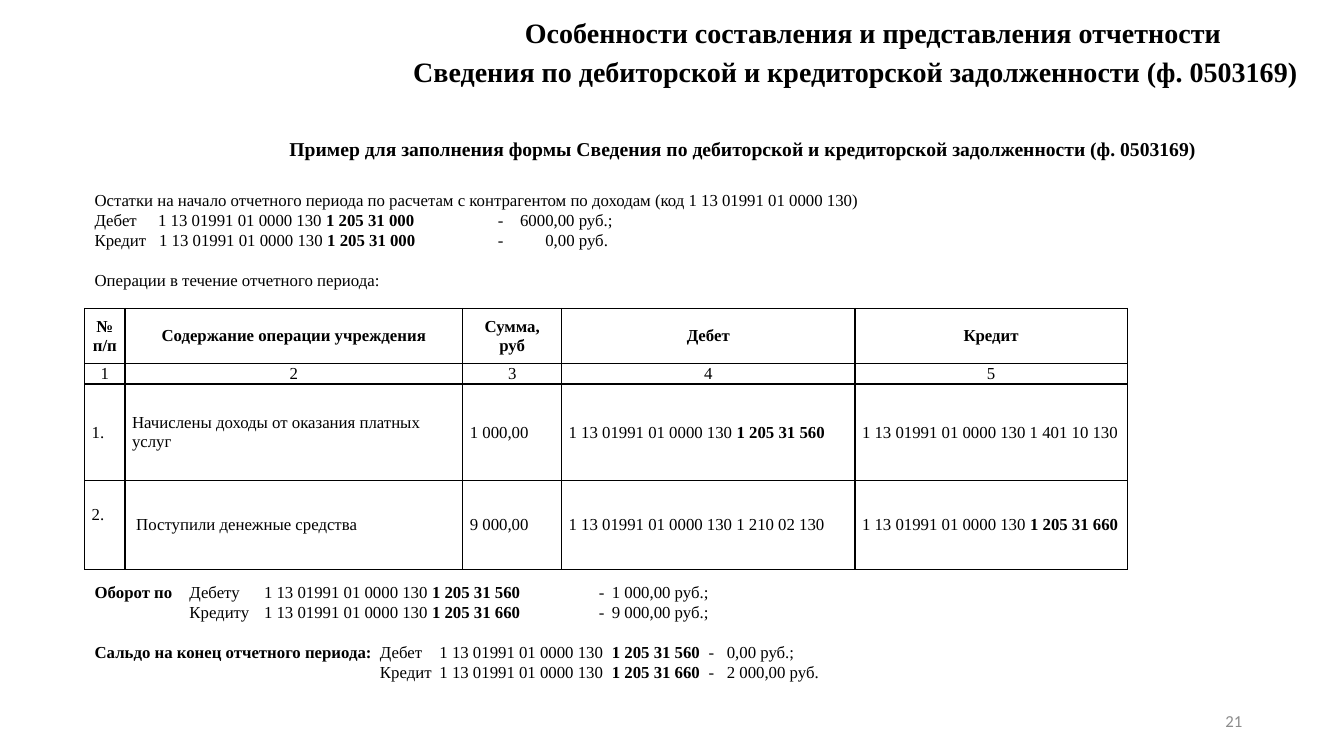
from lxml import etree
from pptx import Presentation
from pptx.dml.color import RGBColor
from pptx.enum.text import MSO_ANCHOR, MSO_AUTO_SIZE, PP_ALIGN
from pptx.oxml.ns import qn
from pptx.util import Inches, Pt

LEFT, CENTER, RIGHT = PP_ALIGN.LEFT, PP_ALIGN.CENTER, PP_ALIGN.RIGHT
TOP, MIDDLE = MSO_ANCHOR.TOP, MSO_ANCHOR.MIDDLE
BLACK, GRAY = "000000", "8C8C8C"
SERIF, SANS = "Times New Roman", "Calibri"
TITLE_ONLY = 5

# Text between ** marks is bold.
TITLE = "**Особенности составления и представления отчетности**"
FORM = "**Сведения по дебиторской и кредиторской задолженности (ф. 0503169)**"
EXAMPLE = "**Пример для заполнения формы Сведения по дебиторской и кредиторской задолженности (ф. 0503169)**"
PAGE = "21"

# Each paragraph: text, tab stops in inches, space before in points
OPENING = [
    ("Остатки на начало отчетного периода по расчетам с контрагентом по доходам "
     "(код 1 13 01991 01 0000 130)", (), 0),
    ("Дебет\t1 13 01991 01 0000 130 **1 205 31 000**\t-\t6000,00 руб.;", (0.63, 4, 4.22), 0),
    ("Кредит\t1 13 01991 01 0000 130 **1 205 31 000**\t-\t0,00 руб.", (0.64, 4, 4.47), 0),
    ("Операции в течение отчетного периода:", (), 14),
]
TURNOVER_TABS = (0.94, 1.68, 5, 5.13)
BALANCE_TABS = (2.83, 3.42, 5.13, 6.09, 6.27)
CLOSING = [
    ("**Оборот по**\tДебету\t1 13 01991 01 0000 130 **1 205 31 560**\t-\t1 000,00 руб.;", TURNOVER_TABS, 0),
    ("\tКредиту\t1 13 01991 01 0000 130 **1 205 31 660**\t-\t9 000,00 руб.;", TURNOVER_TABS, 0),
    ("**Сальдо на конец отчетного периода:**\tДебет\t1 13 01991 01 0000 130\t**1 205 31 560**\t-\t0,00 руб.;",
     BALANCE_TABS, 14),
    ("\tКредит\t1 13 01991 01 0000 130\t**1 205 31 660**\t-\t2 000,00 руб.", BALANCE_TABS, 0),
]

COLUMNS = (0.4, 3.35, 0.98, 2.91, 2.7)
ROWS = (0.55, 0.2, 0.96, 0.88)
HEADER_ROWS = 2
OPERATIONS = [
    ["**№ п/п**", "**Содержание операции учреждения**", "**Сумма,**\n**руб**", "**Дебет**", "**Кредит**"],
    ["1", "2", "3", "4", "5"],
    ["1.", "Начислены доходы от оказания платных услуг", "1 000,00",
     "1 13 01991 01 0000 130 **1 205 31 560**", "1 13 01991 01 0000 130 1 401 10 130"],
    ["2.", " Поступили денежные средства", "9 000,00",
     "1 13 01991 01 0000 130 1 210 02 130", "1 13 01991 01 0000 130 **1 205 31 660**"],
]


def rgb(color):
    return RGBColor.from_string(color)


def add_tabs(p, stops):
    tabs = etree.SubElement(p._p.get_or_add_pPr(), qn("a:tabLst"))
    for stop in stops:
        etree.SubElement(tabs, qn("a:tab"), pos=str(Inches(stop)), algn="l")


def write(tf, paragraphs, size=12, align=LEFT, font=SERIF, color=BLACK):
    for i, (text, stops, before) in enumerate(paragraphs):
        p = tf.add_paragraph() if i else tf.paragraphs[0]
        if stops:
            add_tabs(p, stops)
        p.alignment = align
        p.space_before = Pt(before)
        for j, part in enumerate(text.split("**")):
            if part:
                r = p.add_run()
                r.text = part
                look = {"name": font, "size": Pt(size), "bold": j % 2 == 1}
                for key, value in look.items():
                    setattr(r.font, key, value)
                r.font.color.rgb = rgb(color)


def place(sp, box, paragraphs, anchor=TOP, **look):
    sp.left, sp.top, sp.width, sp.height = map(Inches, box)
    tf = sp.text_frame
    frame = {"word_wrap": True, "auto_size": MSO_AUTO_SIZE.NONE, "vertical_anchor": anchor}
    for key, value in frame.items():
        setattr(tf, key, value)
    write(tf, paragraphs, **look)


def add_text(s, box, paragraphs, **look):
    place(s.shapes.add_textbox(0, 0, 0, 0), box, paragraphs, **look)


def add_borders(cell, color=BLACK, width=1):
    tc_pr = cell._tc.get_or_add_tcPr()
    for side in ("lnL", "lnR", "lnT", "lnB"):
        line = etree.SubElement(tc_pr, qn("a:" + side), w=str(Pt(width)))
        fill = etree.SubElement(line, qn("a:solidFill"))
        etree.SubElement(fill, qn("a:srgbClr"), val=color)


def add_operations(s, left, top):
    size = map(Inches, (left, top, sum(COLUMNS), sum(ROWS)))
    table = s.shapes.add_table(len(ROWS), len(COLUMNS), *size).table
    table.first_row = table.horz_banding = False
    for column, width in zip(table.columns, COLUMNS):
        column.width = Inches(width)
    for i, (height, texts) in enumerate(zip(ROWS, OPERATIONS)):
        table.rows[i].height = Inches(height)
        for j, text in enumerate(texts):
            cell = table.cell(i, j)
            add_borders(cell)
            cell.fill.background()
            margins = {"margin_left": 0.07, "margin_right": 0.07, "margin_top": 0, "margin_bottom": 0}
            for key, value in margins.items():
                setattr(cell, key, Inches(value))
            cell.vertical_anchor = MIDDLE
            write(cell.text_frame, [(line, (), 0) for line in text.split("\n")],
                  align=CENTER if i < HEADER_ROWS else LEFT)
    # The last row's number sits one half line above the middle
    table.cell(len(ROWS) - 1, 0).margin_bottom = Inches(0.2)


def main():
    prs = Presentation()
    prs.slide_width, prs.slide_height = Inches(13.33), Inches(7.5)
    s = prs.slides.add_slide(prs.slide_layouts[TITLE_ONLY])
    place(s.shapes.title, (4.46, 0.1, 8.4, 0.44), [(TITLE, (), 0)], size=20, align=CENTER)
    add_text(s, (3.98, 0.49, 9.01, 0.44), [(FORM, (), 0)], size=20, align=CENTER)
    add_text(s, (2.11, 1.31, 10.52, 0.34), [(EXAMPLE, (), 0)], size=14, align=CENTER)
    add_text(s, (0.84, 1.82, 10.95, 1.11), OPENING, anchor=MIDDLE)
    add_operations(s, 0.84, 3.06)
    add_text(s, (0.84, 5.71, 9.09, 1.11), CLOSING, anchor=MIDDLE)
    add_text(s, (9.42, 6.95, 3, 0.4), [(PAGE, (), 0)], anchor=MIDDLE,
             align=RIGHT, font=SANS, color=GRAY)
    prs.save("out.pptx")


if __name__ == "__main__":
    main()
